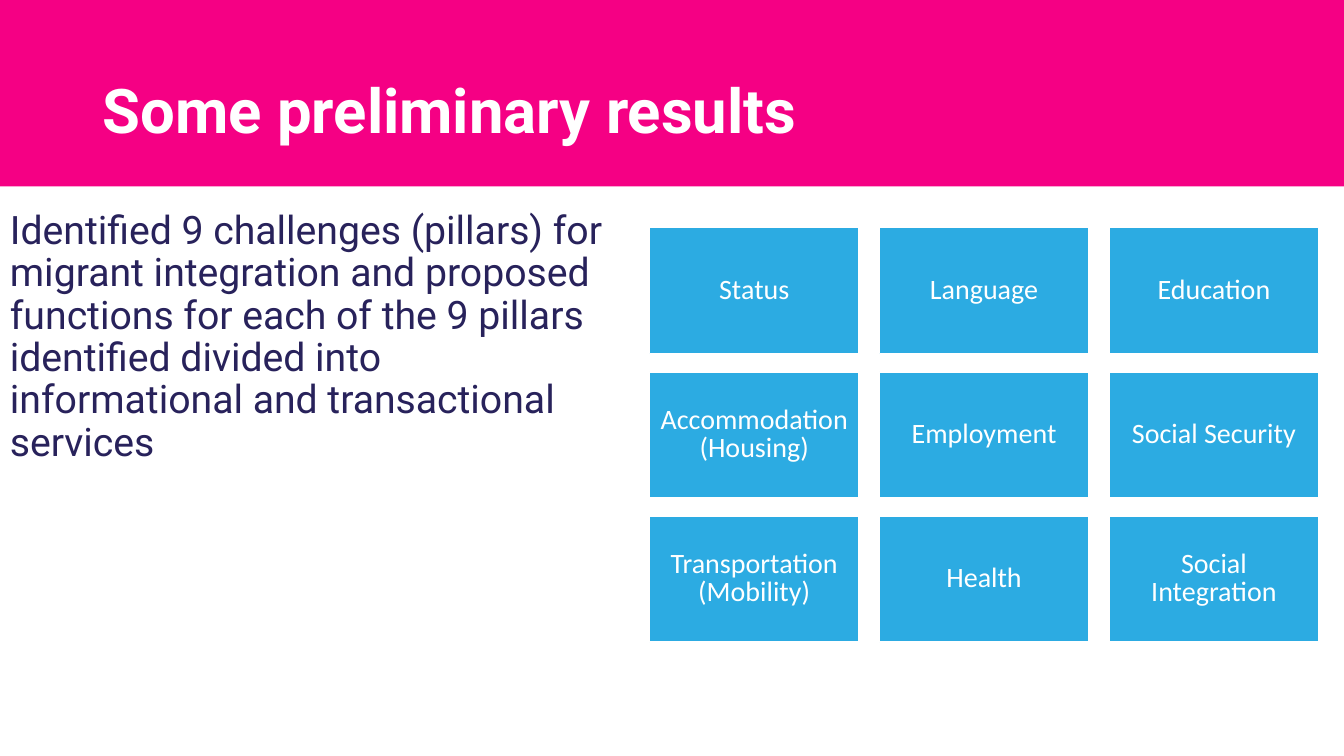
from dataclasses import dataclass

from pptx import Presentation
from pptx.dml.color import RGBColor
from pptx.enum import shapes, text
from pptx.util import Inches, Pt

TITLE = "Some preliminary results"
SUMMARY = (
    "Identified 9 challenges (pillars) for migrant integration and proposed "
    "functions for each of the 9 pillars identified divided into "
    "informational and transactional services"
)
PILLARS = [
    ["Status", "Language", "Education"],
    ["Accommodation (Housing)", "Employment", "Social Security"],
    ["Transportation (Mobility)", "Health", "Social Integration"],
]

BAND_BOX = (-0.76, -0.51, 14.96, 2.36)
TITLE_BOX = (0.92, 0.4, 11.5, 1.45)
SUMMARY_BOX = (0, 2.04, 6.28, 4.55)
GRID_LEFT, GRID_TOP = 6.44, 2.26
TILE_WIDTH, TILE_HEIGHT = 2.08, 1.25
COLUMN_GAP, ROW_GAP = 0.2, 0.18


@dataclass(frozen=True)
class Theme:
    band: RGBColor = RGBColor.from_string("F50084")
    tile: RGBColor = RGBColor.from_string("2CABE2")
    ink: RGBColor = RGBColor.from_string("28225B")
    white: RGBColor = RGBColor.from_string("FFFFFF")
    heading_font: str = "Roboto"
    tile_font: str = "Calibri"
    title_size: int = 44
    summary_size: int = 28
    tile_size: int = 20


THEME = Theme()


def add_rectangle(slide, box, fill):
    shape = slide.shapes.add_shape(
        shapes.MSO_SHAPE.RECTANGLE, *(Inches(length) for length in box))
    shape.shadow.inherit = False
    shape.fill.solid()
    shape.fill.fore_color.rgb = fill
    shape.line.fill.background()
    return shape


def write(shape, words, font_name, size, color, spacing=0.9, bold=False,
          align=text.PP_ALIGN.LEFT, anchor=text.MSO_ANCHOR.MIDDLE):
    frame = shape.text_frame
    frame.word_wrap = True
    frame.vertical_anchor = anchor
    paragraph = frame.paragraphs[0]
    paragraph.text = words
    paragraph.alignment = align
    paragraph.line_spacing = spacing
    font = paragraph.font
    font.name, font.size, font.bold = font_name, Pt(size), bold
    font.color.rgb = color


def add_text(slide, box, words, *style, **options):
    shape = slide.shapes.add_textbox(*(Inches(length) for length in box))
    write(shape, words, *style, **options)


def add_pillars(slide):
    for row, names in enumerate(PILLARS):
        for column, name in enumerate(names):
            left = GRID_LEFT + column * (TILE_WIDTH + COLUMN_GAP)
            top = GRID_TOP + row * (TILE_HEIGHT + ROW_GAP)
            tile = add_rectangle(
                slide, (left, top, TILE_WIDTH, TILE_HEIGHT), THEME.tile)
            tile.line.color.rgb = THEME.white
            tile.line.width = Pt(1)
            write(tile, name, THEME.tile_font, THEME.tile_size, THEME.white,
                  spacing=0.85, align=text.PP_ALIGN.CENTER)


def main():
    presentation = Presentation()
    presentation.slide_width = Inches(13.33)
    presentation.slide_height = Inches(7.5)
    slide = presentation.slides.add_slide(presentation.slide_layouts[6])

    add_rectangle(slide, BAND_BOX, THEME.band)
    add_text(slide, TITLE_BOX, TITLE, THEME.heading_font, THEME.title_size,
             THEME.white, bold=True)
    add_text(slide, SUMMARY_BOX, SUMMARY, THEME.heading_font,
             THEME.summary_size, THEME.ink, anchor=text.MSO_ANCHOR.TOP)
    add_pillars(slide)

    presentation.save("out.pptx")


if __name__ == "__main__":
    main()
